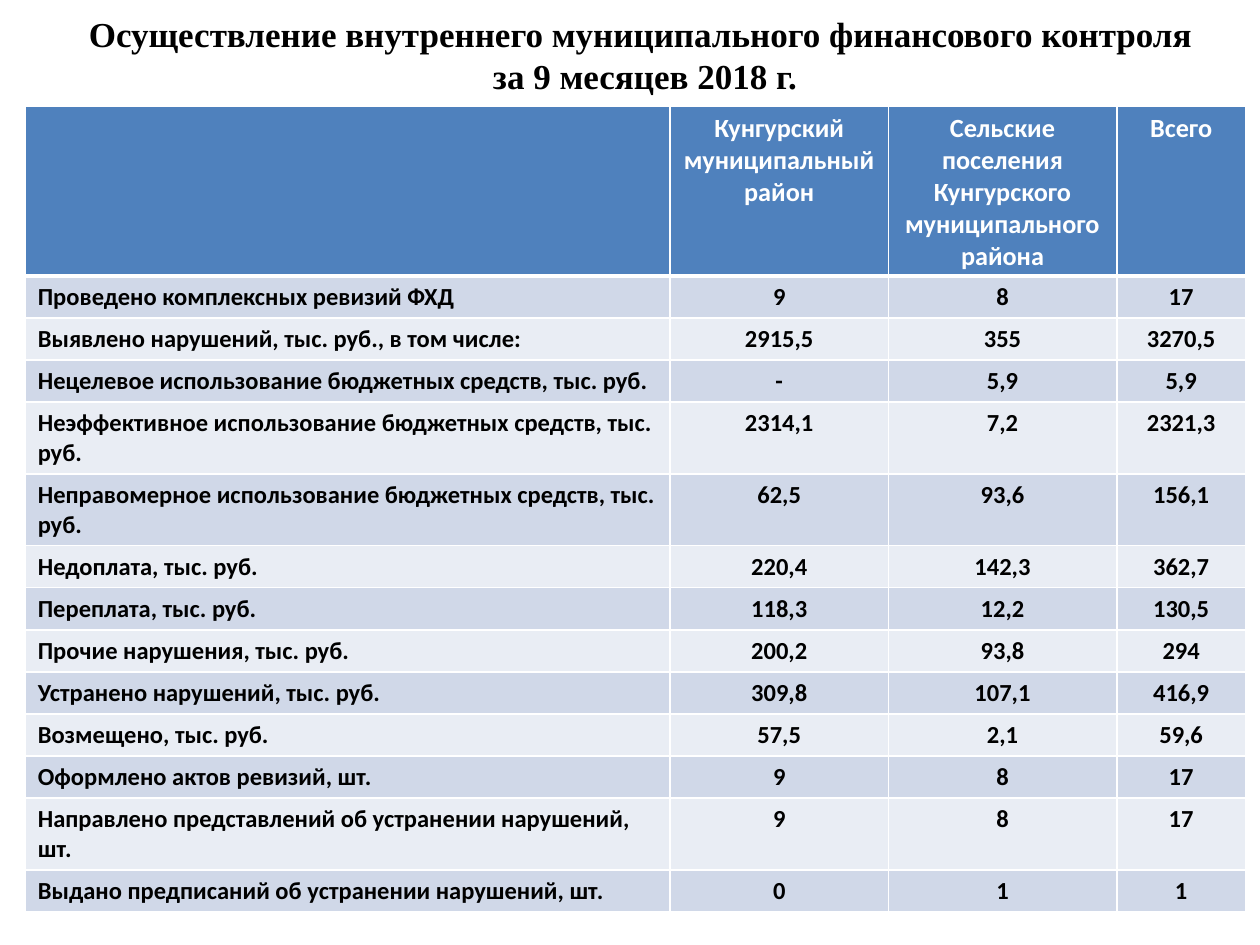
from dataclasses import dataclass
from typing import NamedTuple

from lxml import etree
from pptx import Presentation
from pptx.dml.color import RGBColor
from pptx.enum import text
from pptx.oxml import ns
from pptx.util import Pt


@dataclass(frozen=True)
class Theme:
    title_font: str = "Times New Roman"
    table_font: str = "Calibri"
    title_size: float = 20
    header_size: float = 15
    body_size: float = 14
    ink: str = "000000"
    white: str = "FFFFFF"
    header_fill: str = "4F81BD"
    bands: tuple[str, str] = ("D0D8E8", "E9EDF4")
    thin: float = 1
    thick: float = 3


class Row(NamedTuple):
    label: str
    district: str
    settlements: str
    total: str
    height: float = 24


THEME = Theme()
TALL = 41
TITLE = "Осуществление внутреннего муниципального финансового контроля \vза 9 месяцев 2018 г."
COLUMN_WIDTHS = (368.6, 124.6, 130.6, 73.6)
ROWS = (
    Row("", "Кунгурский муниципальный район",
        "Сельские поселения Кунгурского муниципального района", "Всего", 97),
    Row("Проведено комплексных ревизий ФХД", "9", "8", "17"),
    Row("Выявлено нарушений, тыс. руб., в том числе:", "2915,5", "355", "3270,5"),
    Row("Нецелевое использование бюджетных средств, тыс. руб.", "-", "5,9", "5,9"),
    Row("Неэффективное использование бюджетных средств, тыс. руб.",
        "2314,1", "7,2", "2321,3", TALL),
    Row("Неправомерное использование бюджетных средств, тыс. руб.",
        "62,5", "93,6", "156,1", TALL),
    Row("Недоплата, тыс. руб.", "220,4", "142,3", "362,7"),
    Row("Переплата, тыс. руб.", "118,3", "12,2", "130,5"),
    Row("Прочие нарушения, тыс. руб.", "200,2", "93,8", "294"),
    Row("Устранено нарушений, тыс. руб.", "309,8", "107,1", "416,9"),
    Row("Возмещено, тыс. руб.", "57,5", "2,1", "59,6"),
    Row("Оформлено актов ревизий, шт.", "9", "8", "17"),
    Row("Направлено представлений об устранении нарушений, шт.", "9", "8", "17", TALL),
    Row("Выдано предписаний об устранении нарушений, шт.", "0", "1", "1"),
)


def format_text(tf, font: str, size: float, color: str, centred: bool) -> None:
    for p in tf.paragraphs:
        p.alignment = text.PP_ALIGN.CENTER if centred else text.PP_ALIGN.LEFT
        for r in p.runs:
            r.font.name = font
            r.font.size = Pt(size)
            r.font.bold = True
            r.font.color.rgb = RGBColor.from_string(color)


def set_borders(cell, top: float, bottom: float) -> None:
    """Draw white lines on all four sides; call before filling the cell."""
    tc_pr = cell._tc.get_or_add_tcPr()
    widths = {"lnL": THEME.thin, "lnR": THEME.thin, "lnT": top, "lnB": bottom}
    for tag, width in widths.items():
        line = etree.SubElement(tc_pr, ns.qn(f"a:{tag}"), w=str(Pt(width)))
        fill = etree.SubElement(line, ns.qn("a:solidFill"))
        etree.SubElement(fill, ns.qn("a:srgbClr"), val=THEME.white)


def add_title(s) -> None:
    sp = s.shapes.add_textbox(Pt(36.7), Pt(0), Pt(663.8), Pt(62.6))
    tf = sp.text_frame
    tf.word_wrap = True
    tf.vertical_anchor = text.MSO_ANCHOR.MIDDLE
    tf.text = TITLE
    format_text(tf, THEME.title_font, THEME.title_size, THEME.ink, centred=True)


def add_audit_table(s) -> None:
    frame = s.shapes.add_table(
        len(ROWS), len(COLUMN_WIDTHS), Pt(14.4), Pt(60.5),
        Pt(sum(COLUMN_WIDTHS)), Pt(sum(row.height for row in ROWS)))
    table = frame.table
    for column, width in zip(table.columns, COLUMN_WIDTHS):
        column.width = Pt(width)
    for i, row in enumerate(ROWS):
        table.rows[i].height = Pt(row.height)
        header = i == 0
        fill = THEME.header_fill if header else THEME.bands[(i - 1) % 2]
        size = THEME.header_size if header else THEME.body_size
        color = THEME.white if header else THEME.ink
        for j, value in enumerate(row[:4]):
            cell = table.cell(i, j)
            set_borders(cell, top=THEME.thick if i == 1 else THEME.thin,
                        bottom=THEME.thick if header else THEME.thin)
            cell.fill.solid()
            cell.fill.fore_color.rgb = RGBColor.from_string(fill)
            if value:
                cell.text_frame.text = value
                format_text(cell.text_frame, THEME.table_font, size, color, centred=j > 0)


def main() -> None:
    prs = Presentation()
    prs.slide_width, prs.slide_height = Pt(720), Pt(540)
    s = prs.slides.add_slide(prs.slide_layouts[6])
    add_title(s)
    add_audit_table(s)
    prs.save("out.pptx")


if __name__ == "__main__":
    main()
